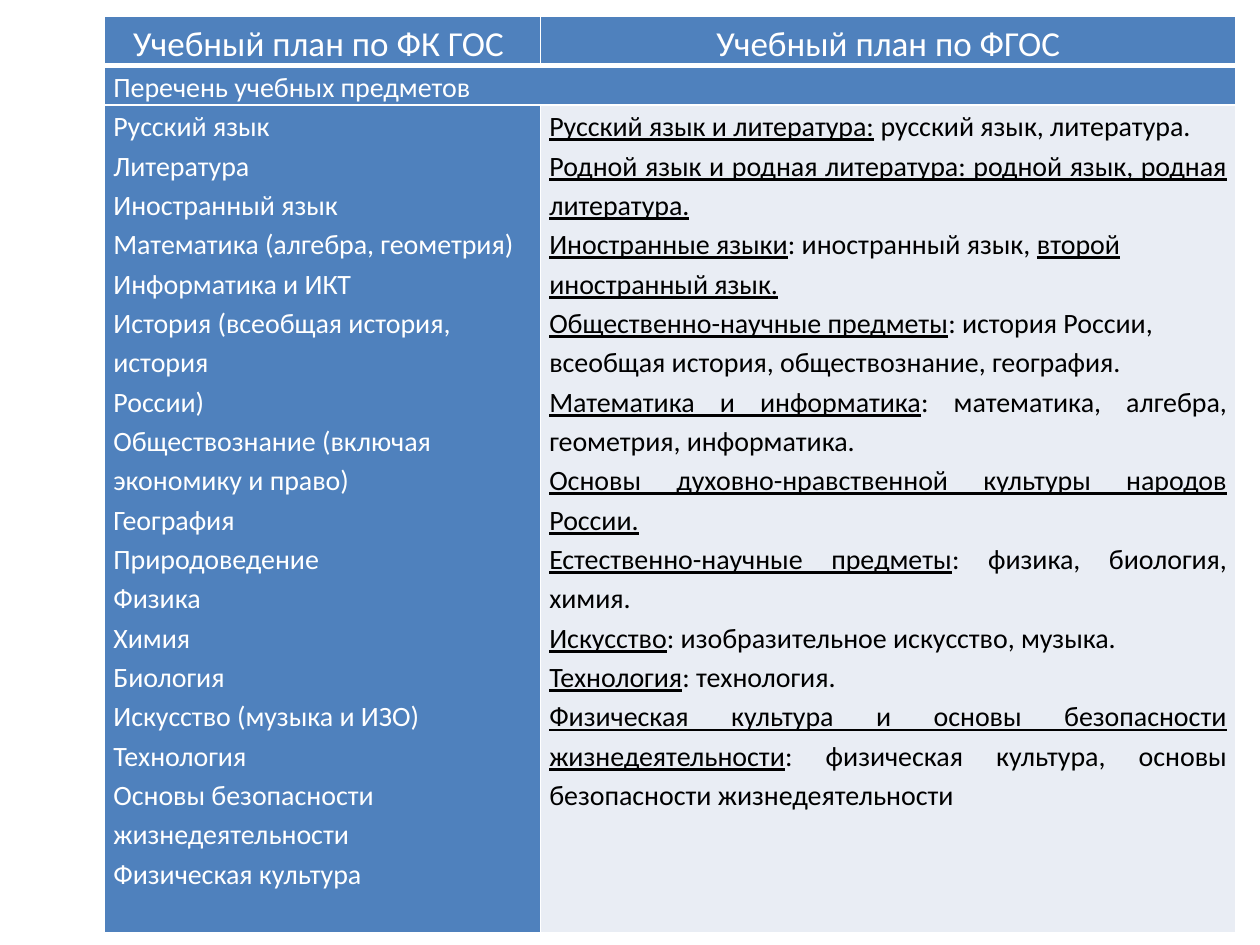
from dataclasses import dataclass

from lxml import etree
from pptx import Presentation
from pptx.dml.color import RGBColor
from pptx.enum import text
from pptx.oxml import ns
from pptx.util import Inches, Pt


@dataclass(frozen=True)
class Theme:
    font: str = "Calibri"
    blue: str = "4F81BD"
    pale: str = "E9EDF4"
    white: str = "FFFFFF"
    black: str = "000000"
    head: int = 20
    body: int = 16
    thin: int = 1
    thick: int = 3


T = Theme()
ALIGN = text.PP_ALIGN


@dataclass(frozen=True)
class Block:
    """Cell content; words between underscores are underlined."""
    row: int
    col: int
    lines: list[str]
    size: int = T.body
    fill: str = T.blue
    ink: str = T.white
    align: ALIGN = ALIGN.LEFT
    base: int = T.thin


OLD = [
    "Русский язык",
    "Литература",
    "Иностранный язык",
    "Математика (алгебра, геометрия)",
    "Информатика и ИКТ",
    "История (всеобщая история, история",
    "России)",
    "Обществознание (включая",
    "экономику и право)",
    "География",
    "Природоведение",
    "Физика",
    "Химия",
    "Биология",
    "Искусство (музыка и ИЗО)",
    "Технология",
    "Основы безопасности",
    "жизнедеятельности",
    "Физическая культура",
]
NEW = [
    "_Русский язык и литература:_ русский язык, литература.",
    "_Родной язык и родная литература: родной язык, родная литература._",
    "_Иностранные языки_: иностранный язык, _второй_",
    "_иностранный язык._",
    "_Общественно-научные предметы_: история России,",
    "всеобщая история, обществознание, география.",
    "_Математика и информатика_: математика, алгебра, геометрия, информатика.",
    "_Основы духовно-нравственной культуры народов России._",
    "_Естественно-научные предметы_: физика, биология, химия.",
    "_Искусство_: изобразительное искусство, музыка.",
    "_Технология_: технология.",
    "_Физическая культура и основы безопасности жизнедеятельности_"
    ": физическая культура, основы безопасности жизнедеятельности",
]
HEAD = {"size": T.head, "align": ALIGN.CENTER, "base": T.thick}
BLOCKS = [
    Block(0, 0, ["Учебный план по ФК ГОС "], **HEAD),
    Block(0, 1, ["Учебный план по ФГОС"], **HEAD),
    Block(1, 0, ["Перечень учебных предметов"]),
    Block(2, 0, OLD),
    Block(2, 1, NEW, fill=T.pale, ink=T.black, align=ALIGN.JUSTIFY),
]
COLS = [3.46, 5.52]
ROWS = [0.39, 0.29, 6.57]


def paint(cell, fill: str, base: int) -> None:
    """Fill a cell and rule its four sides, the bottom one at its own width."""
    cell.fill.solid()
    cell.fill.fore_color.rgb = RGBColor.from_string(fill)
    props = cell._tc.get_or_add_tcPr()
    for spot, side in enumerate("LRTB"):
        width = base if side == "B" else T.thin
        line = etree.Element(ns.qn(f"a:ln{side}"), w=str(Pt(width)))
        solid = etree.SubElement(line, ns.qn("a:solidFill"))
        etree.SubElement(solid, ns.qn("a:srgbClr"), val=T.white)
        props.insert(spot, line)


def write(cell, block: Block) -> None:
    edges = {"margin_left": 0.07, "margin_right": 0.07,
             "margin_top": 0, "margin_bottom": 0}
    for name, size in edges.items():
        setattr(cell, name, Inches(size))
    frame = cell.text_frame
    for i, line in enumerate(block.lines):
        par = frame.add_paragraph() if i else frame.paragraphs[0]
        par.alignment = block.align
        par.line_spacing = 1.15
        for j, part in enumerate(line.split("_")):
            if not part:
                continue
            run = par.add_run()
            run.text = part
            look = {"name": T.font, "size": Pt(block.size),
                    "bold": False, "underline": j % 2 == 1}
            for name, value in look.items():
                setattr(run.font, name, value)
            run.font.color.rgb = RGBColor.from_string(block.ink)


def main() -> None:
    deck = Presentation()
    deck.slide_width, deck.slide_height = Inches(10), Inches(7.5)
    slide = deck.slides.add_slide(deck.slide_layouts[6])
    grid = slide.shapes.add_table(
        len(ROWS), len(COLS), Inches(0.83), Inches(0.13),
        Inches(sum(COLS)), Inches(sum(ROWS))).table
    for col, width in zip(grid.columns, COLS):
        col.width = Inches(width)
    for row, height in zip(grid.rows, ROWS):
        row.height = Inches(height)
    grid.cell(1, 0).merge(grid.cell(1, 1))
    for block in BLOCKS:
        cell = grid.cell(block.row, block.col)
        write(cell, block)
        paint(cell, block.fill, block.base)
    paint(grid.cell(1, 1), T.blue, T.thin)
    deck.save("out.pptx")


if __name__ == "__main__":
    main()
